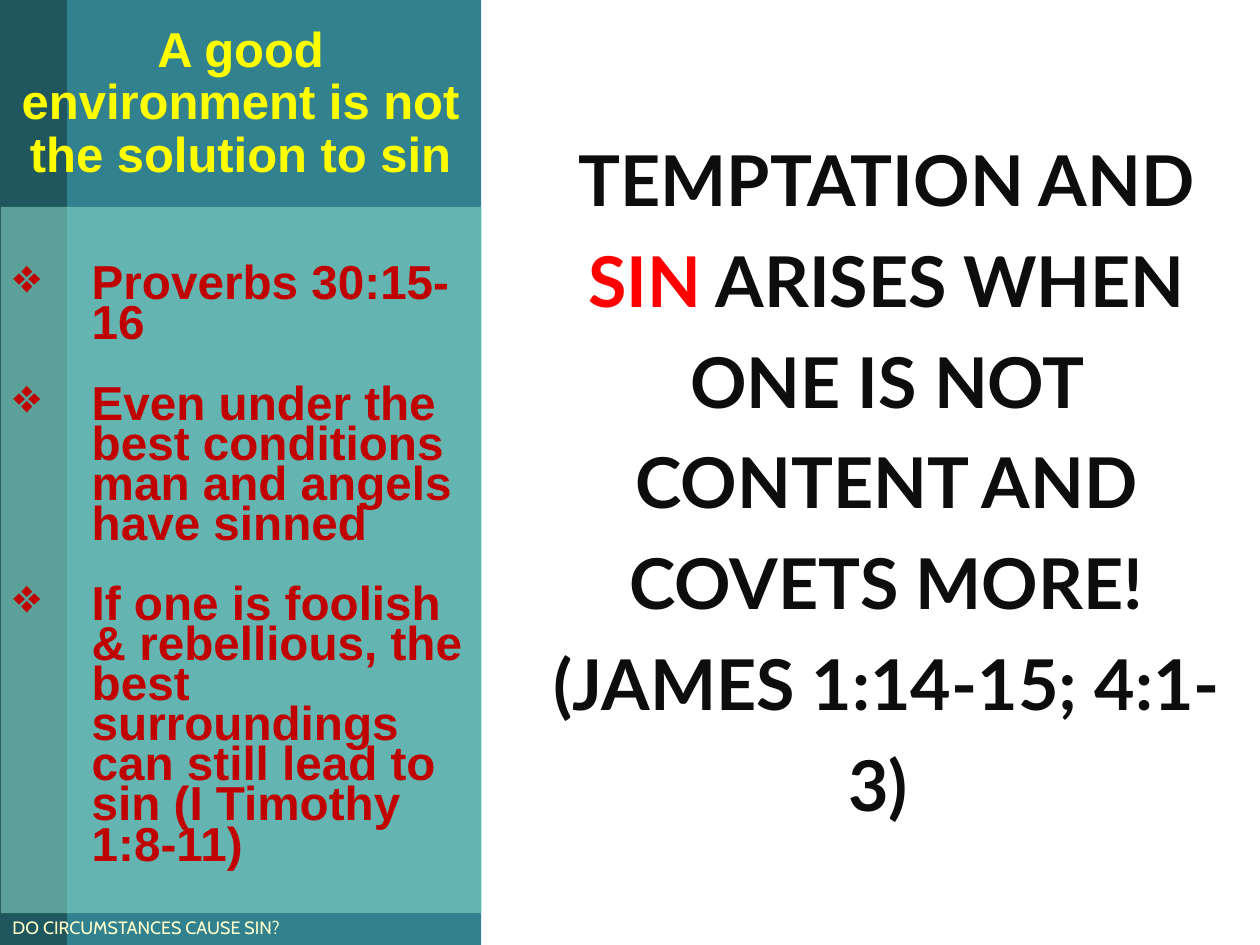
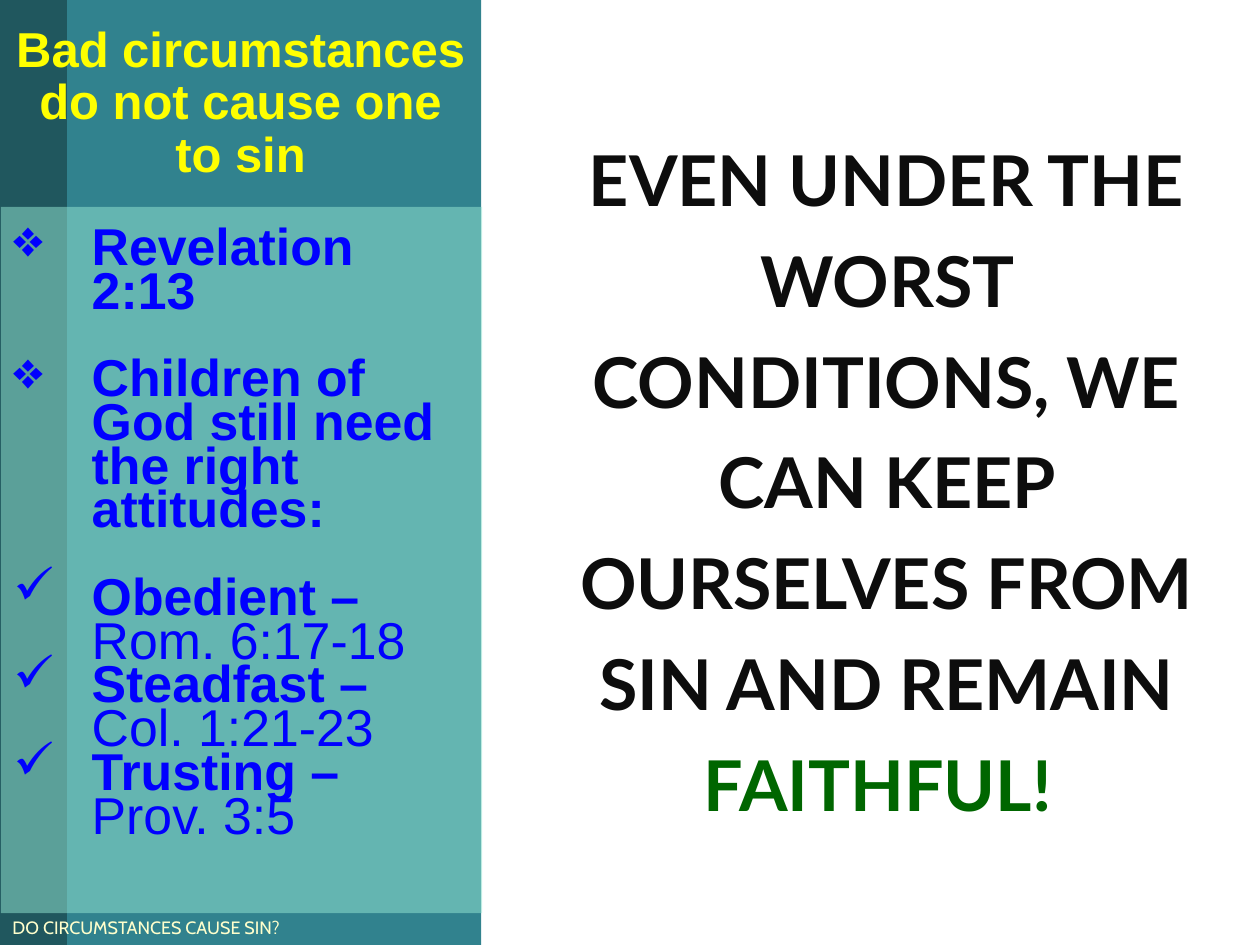
from dataclasses import dataclass

from lxml.etree import SubElement
from pptx import Presentation
from pptx.dml.color import RGBColor
from pptx.enum.shapes import MSO_SHAPE as Preset
from pptx.enum.text import MSO_ANCHOR as Anchor, PP_ALIGN as Align
from pptx.oxml.ns import qn
from pptx.util import Cm, Pt


@dataclass(frozen=True)
class Theme:
    sidebar: str = "31828E"
    stripe: str = "20575E"
    panel: str = "97E9D5"
    panel_opacity: int = 50
    title: str = "FFFF00"
    footer: str = "FFFFCC"
    statement: str = "0D0D0D"
    sin: str = "FF0000"
    faithful: str = "006600"
    warning_points: str = "C00000"
    hope_points: str = "0000FF"
    body_font: str = "Arial"
    statement_font: str = "Lato"
    footer_font: str = "Cabin"
    title_size: float = 28
    title_pitch: float = 30
    statement_size: float = 40
    footer_size: float = 10.2


THEME = Theme()

# Shared geometry
SLIDE_W, SLIDE_H = Cm(25.4), Cm(19.05)
SIDEBAR_W = Cm(9.7)
STRIPE_W = Cm(1.35)
TITLE_H = Cm(4.17)
FOOTER_H = Cm(0.64)
PANEL_LEFT = Cm(0.02)
HANGING = Cm(1.58)
INSET = Cm(0.13)

FOOTER = "DO CIRCUMSTANCES CAUSE SIN?"
DIAMOND, CHECK = "❖", "✓"


def add_band(slide, left, top, width, height, color, opacity=100):
    band = slide.shapes.add_shape(Preset.RECTANGLE, left, top, width, height)
    band.shadow.inherit = False
    band.fill.solid()
    band.fill.fore_color.rgb = RGBColor.from_string(color)
    band.line.fill.background()
    if opacity < 100:
        rgb = band.fill._xPr.find(".//" + qn("a:srgbClr"))
        SubElement(rgb, qn("a:alpha"), val=str(opacity * 1000))
    return band


def add_run(paragraph, text, font, size, color, bold=False):
    run = paragraph.add_run()
    run.text = text
    run.font.name = font
    run.font.size = Pt(size)
    run.font.bold = bold
    run.font.color.rgb = RGBColor.from_string(color)


def add_label(slide, left, top, width, height):
    """Return the only paragraph of a new, vertically centred text box."""
    frame = slide.shapes.add_textbox(left, top, width, height).text_frame
    frame.word_wrap = True
    frame.vertical_anchor = Anchor.MIDDLE
    return frame.paragraphs[0]


def set_indent(paragraph, margin, first_line=0, bullet=None):
    props = paragraph._p.get_or_add_pPr()
    props.set("marL", str(margin))
    props.set("indent", str(first_line))
    if bullet:
        SubElement(props, qn("a:buChar"), char=bullet)


def add_sidebar(slide, title):
    # Bands
    add_band(slide, 0, 0, SIDEBAR_W, SLIDE_H, THEME.sidebar)
    add_band(slide, 0, 0, STRIPE_W, SLIDE_H, THEME.stripe)

    # Footer
    footer = add_label(slide, 0, SLIDE_H - FOOTER_H, SIDEBAR_W, FOOTER_H)
    footer.line_spacing = 0.9
    footer.space_after = Pt(6)
    add_run(footer, FOOTER, THEME.footer_font, THEME.footer_size, THEME.footer)

    # Title
    heading = add_label(slide, 0, 0, SIDEBAR_W, TITLE_H)
    heading.alignment = Align.CENTER
    heading.line_spacing = Pt(THEME.title_pitch)
    add_run(heading, title, THEME.body_font, THEME.title_size, THEME.title, True)


def add_statement(slide, parts):
    """Parts are (text, colour) pairs of one centred sentence."""
    statement = add_label(slide, SIDEBAR_W, 0, SLIDE_W - SIDEBAR_W, SLIDE_H)
    set_indent(statement, Cm(0.64))
    statement.alignment = Align.CENTER
    statement.line_spacing = 1.2
    statement.space_after = Pt(6)
    for text, color in parts:
        add_run(statement, text, THEME.statement_font, THEME.statement_size,
                color, True)


def add_points(slide, points, color, size, pitch, extra_top=0, extra_bottom=0):
    """Points are (bullet, gap before, bold text, plain text)."""
    panel = add_band(slide, PANEL_LEFT, TITLE_H, SIDEBAR_W,
                     SLIDE_H - TITLE_H - FOOTER_H, THEME.panel,
                     THEME.panel_opacity)
    frame = panel.text_frame
    frame.word_wrap = True
    frame.vertical_anchor = Anchor.MIDDLE
    frame.margin_top = INSET + extra_top
    frame.margin_bottom = INSET + extra_bottom
    for index, (bullet, gap, strong, plain) in enumerate(points):
        point = frame.add_paragraph() if index else frame.paragraphs[0]
        set_indent(point, HANGING, -HANGING, bullet)
        point.alignment = Align.LEFT
        point.line_spacing = Pt(pitch)
        if gap:
            point.space_before = Pt(pitch)
        add_run(point, strong, THEME.body_font, size, color, True)
        if plain:
            add_run(point, plain, THEME.body_font, size, color)


def add_environment_slide(slide):
    add_sidebar(slide, "A good environment is not the solution to sin")
    add_statement(slide, [
        ("TEMPTATION AND ", THEME.statement),
        ("SIN", THEME.sin),
        (" ARISES WHEN ONE IS NOT CONTENT AND COVETS MORE! "
         "(JAMES 1:14-15; 4:1-3) ", THEME.statement),
    ])
    add_points(slide, [
        (DIAMOND, False, "Proverbs 30:15-16", ""),
        (DIAMOND, True,
         "Even under the best conditions man and angels have sinned", ""),
        (DIAMOND, True, "If one is foolish & rebellious, the best surroundings "
         "can still lead to sin (I Timothy 1:8-11)", ""),
    ], THEME.warning_points, size=27.2, pitch=22.9, extra_top=Cm(0.4))


def add_circumstances_slide(slide):
    add_sidebar(slide, "Bad circumstances do not cause one to sin")
    add_statement(slide, [
        ("EVEN UNDER THE WORST CONDITIONS, WE CAN KEEP OURSELVES FROM SIN "
         "AND REMAIN ", THEME.statement),
        ("FAITHFUL! ", THEME.faithful),
    ])
    add_points(slide, [
        (DIAMOND, False, "Revelation 2:13", ""),
        (DIAMOND, True, "Children of God still need the right attitudes:", ""),
        (CHECK, True, "Obedient – ", "Rom. 6:17-18"),
        (CHECK, False, "Steadfast – ", "Col. 1:21-23"),
        (CHECK, False, "Trusting – ", "Prov. 3:5"),
    ], THEME.hope_points, size=29.6, pitch=25, extra_bottom=Cm(0.88))


def main():
    deck = Presentation()
    deck.slide_width, deck.slide_height = SLIDE_W, SLIDE_H
    blank = deck.slide_layouts[6]
    for build in (add_environment_slide, add_circumstances_slide):
        build(deck.slides.add_slide(blank))
    deck.save("out.pptx")


if __name__ == "__main__":
    main()
